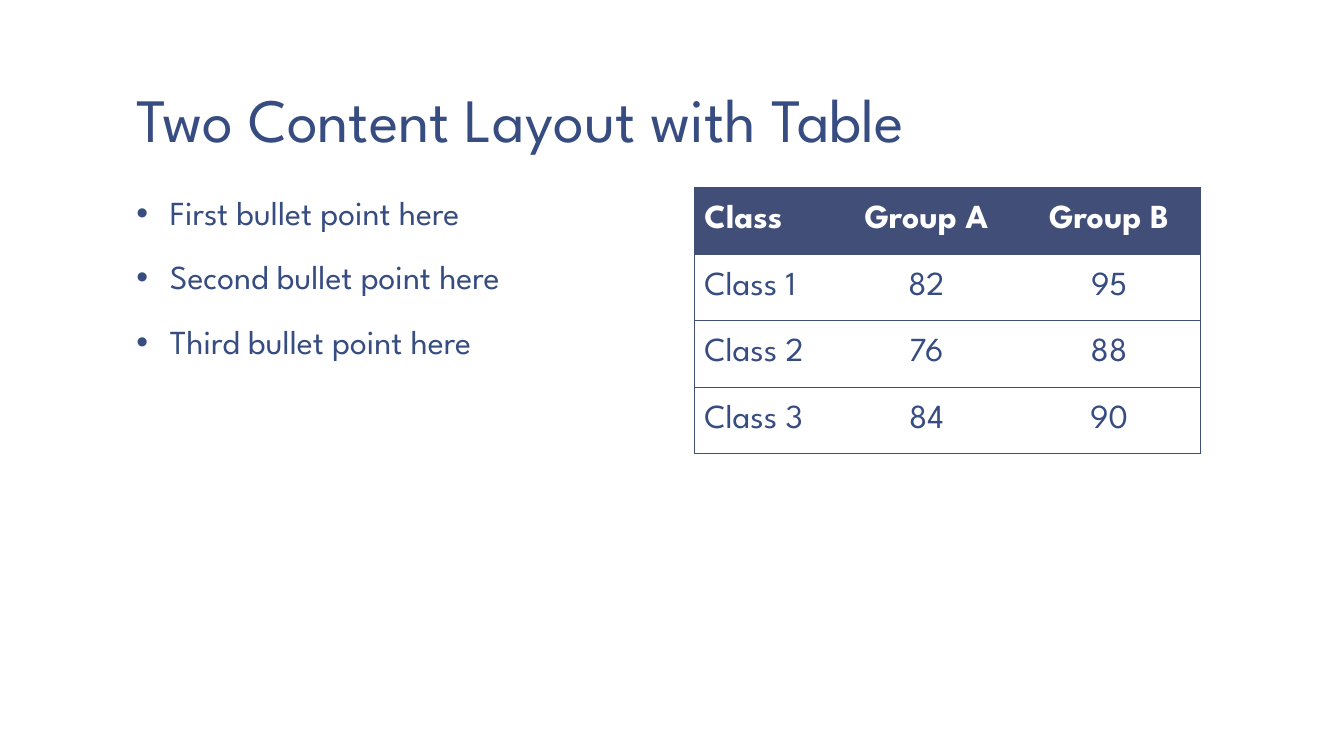
from lxml.etree import SubElement
from pptx import Presentation
from pptx.dml.color import RGBColor
from pptx.enum.text import MSO_ANCHOR as Anchor, MSO_AUTO_SIZE as AutoSize, PP_ALIGN as Align
from pptx.oxml.ns import qn
from pptx.util import Pt

TITLE = "Two Content Layout with Table"
BULLETS = ["First bullet point here", "Second bullet point here", "Third bullet point here"]
SCORES = [
    ("Class", "Group A", "Group B"),
    ("Class 1", "82", "95"),
    ("Class 2", "76", "88"),
    ("Class 3", "84", "90"),
]

COLORS = {"background": "FFFFFF", "text": "374C81", "header": "414E77", "header_text": "FFFFFF"}
FONT = "League Spartan"
TITLE_SIZE, TEXT_SIZE = 44, 24
CONTENT_LEFT, CONTENT_TOP = 88, 134
TABLE_LEFT, ROW_HEIGHT = 496, 47.5
COLUMN_WIDTHS = [100.5, 130.5, 130.5]
BORDER_WIDTH = 0.5
BULLET_INDENT = 24


def color(name):
    return RGBColor.from_string(COLORS[name])


def add_run(paragraph, text, size, color_name="text", bold=False):
    run = paragraph.add_run()
    run.text = text
    run.font.name = FONT
    run.font.size = Pt(size)
    run.font.bold = bold
    run.font.color.rgb = color(color_name)


def place(holder, left, top, width, height, anchor):
    """Position a placeholder and set up its text frame."""
    holder.left, holder.top = Pt(left), Pt(top)
    holder.width, holder.height = Pt(width), Pt(height)
    frame = holder.text_frame
    frame.word_wrap = True
    frame.auto_size = AutoSize.NONE
    frame.vertical_anchor = anchor
    frame.margin_left = frame.margin_right = Pt(9.36)
    frame.margin_top = frame.margin_bottom = Pt(5)
    return frame


def set_borders(cell, visible):
    """Draw the visible sides (of L, R, T, B) and clear the others."""
    properties = cell._tc.get_or_add_tcPr()
    for side in "LRTB":
        line = SubElement(properties, qn(f"a:ln{side}"), w=str(Pt(BORDER_WIDTH)))
        if side in visible:
            fill = SubElement(line, qn("a:solidFill"))
            SubElement(fill, qn("a:srgbClr"), val=COLORS["header"])
        else:
            SubElement(line, qn("a:noFill"))


def add_title(slide):
    frame = place(slide.shapes.title, CONTENT_LEFT, 6, 800, 110, Anchor.BOTTOM)
    paragraph = frame.paragraphs[0]
    paragraph.alignment = Align.LEFT
    paragraph.line_spacing = 0.85
    add_run(paragraph, TITLE, TITLE_SIZE)


def add_bullets(slide):
    frame = place(slide.placeholders[1], CONTENT_LEFT, CONTENT_TOP, 392, 352, Anchor.TOP)
    for index, text in enumerate(BULLETS):
        paragraph = frame.add_paragraph() if index else frame.paragraphs[0]
        properties = paragraph._p.get_or_add_pPr()
        properties.set("marL", str(Pt(BULLET_INDENT)))
        properties.set("indent", str(-Pt(BULLET_INDENT)))
        SubElement(properties, qn("a:buChar"), char="•")
        paragraph.line_spacing = 0.95
        paragraph.space_before = Pt(18.7 if index else 0)
        add_run(paragraph, text, TEXT_SIZE)


def add_scores(slide):
    rows, columns = len(SCORES), len(COLUMN_WIDTHS)
    table = slide.shapes.add_table(
        rows, columns, Pt(TABLE_LEFT), Pt(CONTENT_TOP),
        Pt(sum(COLUMN_WIDTHS)), Pt(ROW_HEIGHT * rows)).table
    table.horz_banding = False
    for column, width in zip(table.columns, COLUMN_WIDTHS):
        column.width = Pt(width)
    for r, values in enumerate(SCORES):
        table.rows[r].height = Pt(ROW_HEIGHT)
        is_header = r == 0
        for c, value in enumerate(values):
            cell = table.cell(r, c)
            cell.vertical_anchor = Anchor.MIDDLE
            set_borders(cell, "TB" + ("L" if c == 0 else "") + ("R" if c == columns - 1 else ""))
            if is_header:
                cell.fill.solid()
                cell.fill.fore_color.rgb = color("header")
            else:
                cell.fill.background()
            paragraph = cell.text_frame.paragraphs[0]
            paragraph.alignment = Align.CENTER if c else Align.LEFT
            add_run(paragraph, value, TEXT_SIZE, "header_text" if is_header else "text", is_header)


def main():
    deck = Presentation()
    deck.slide_width, deck.slide_height = Pt(960), Pt(540)
    slide = deck.slides.add_slide(deck.slide_layouts[1])
    slide.background.fill.solid()
    slide.background.fill.fore_color.rgb = color("background")
    add_title(slide)
    add_bullets(slide)
    add_scores(slide)
    deck.save("out.pptx")


if __name__ == "__main__":
    main()
